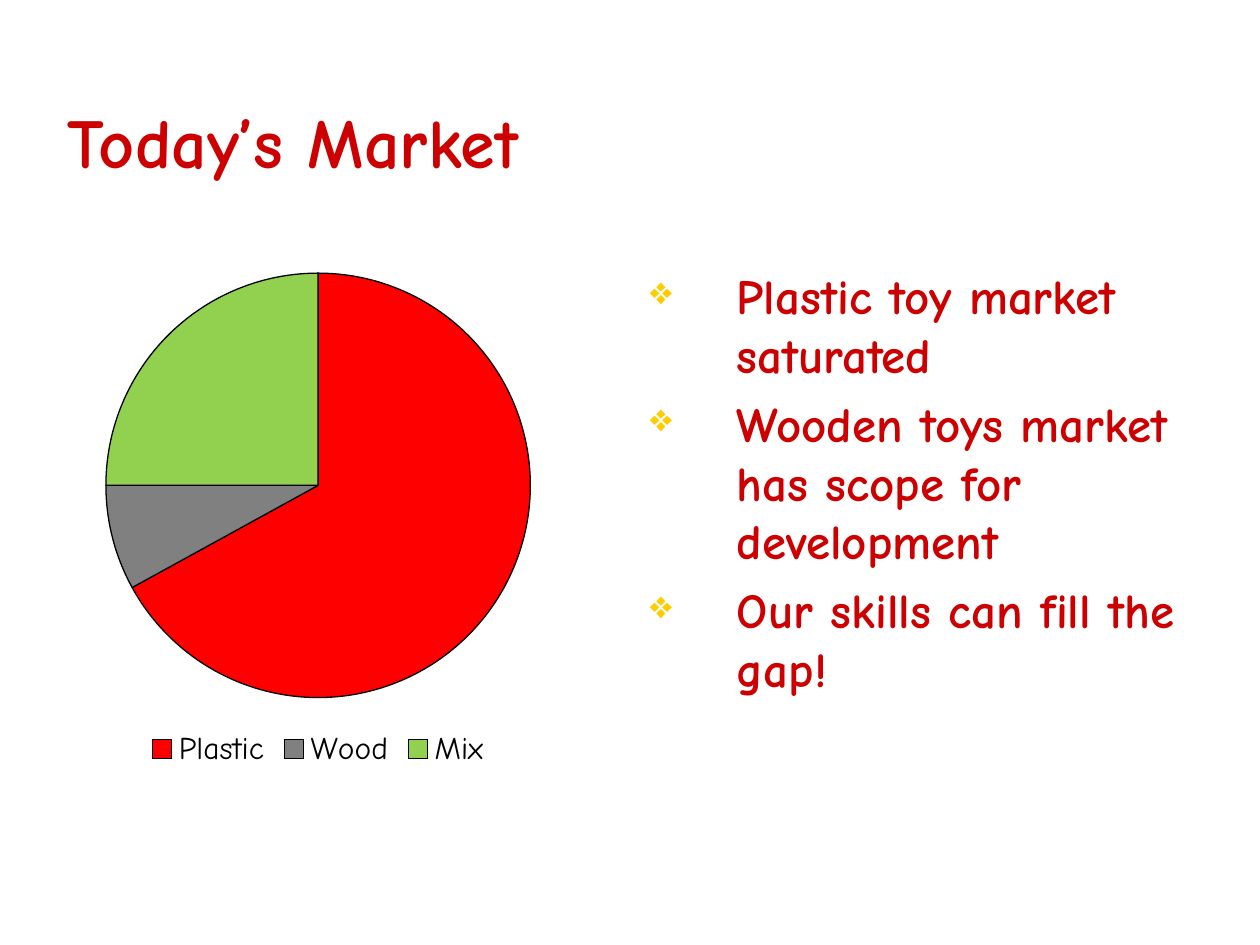
from dataclasses import dataclass

from lxml import etree
from pptx import Presentation
from pptx import util as u
from pptx.chart.data import CategoryChartData
from pptx.dml.color import RGBColor
from pptx.enum import chart as charts, text
from pptx.oxml import ns

FONT = "Comic Neue"
COLORS = {
    "heading": "CC0000",
    "bullet": "FFCC00",
    "outline": "000000",
    "plastic": "FF0000",
    "wood": "808080",
    "mix": "92D050",
}


@dataclass(frozen=True)
class Box:
    left: float
    top: float
    width: float
    height: float

    def lengths(self) -> tuple:
        return tuple(u.Inches(v) for v in (self.left, self.top, self.width, self.height))


@dataclass(frozen=True)
class Share:
    material: str
    percent: int
    color: str


SHARES = [
    Share("Plastic", 67, "plastic"),
    Share("Wood", 8, "wood"),
    Share("Mix", 25, "mix"),
]
FINDINGS = [
    "Plastic toy market saturated",
    "Wooden toys market has scope for development",
    "Our skills can fill the gap!",
]


def color(name: str) -> RGBColor:
    return RGBColor.from_string(COLORS[name])


def add_bullet(paragraph) -> None:
    properties = paragraph._p.get_or_add_pPr()
    properties.set("marL", str(u.Inches(0.69)))
    properties.set("indent", str(-u.Inches(0.69)))
    tint = etree.SubElement(properties, ns.qn("a:buClr"))
    etree.SubElement(tint, ns.qn("a:srgbClr"), val=COLORS["bullet"])
    etree.SubElement(properties, ns.qn("a:buSzPct"), val="80000")
    etree.SubElement(properties, ns.qn("a:buChar"), char="❖")


def add_text(slide, box: Box, lines: list[str], size: int, anchor, bulleted: bool = False) -> None:
    frame = slide.shapes.add_textbox(*box.lengths()).text_frame
    frame.word_wrap = True
    frame.vertical_anchor = anchor
    for index, line in enumerate(lines):
        paragraph = frame.add_paragraph() if index else frame.paragraphs[0]
        if bulleted:
            add_bullet(paragraph)
        if index:
            paragraph.space_before = u.Pt(size * 0.2)
        run = paragraph.add_run()
        run.text = line
        run.font.name = FONT
        run.font.size = u.Pt(size)
        run.font.bold = True
        run.font.color.rgb = color("heading")


def add_market_pie(slide, box: Box, shares: list[Share]) -> None:
    data = CategoryChartData()
    data.categories = [share.material for share in shares]
    data.add_series("Series 1", [share.percent for share in shares])
    pie = slide.shapes.add_chart(charts.XL_CHART_TYPE.PIE, *box.lengths(), data).chart
    pie.has_title = False
    pie.font.name = FONT
    pie.font.size = u.Pt(18)
    pie.font.color.rgb = color("outline")
    pie.has_legend = True
    pie.legend.position = charts.XL_LEGEND_POSITION.BOTTOM
    pie.legend.include_in_layout = False
    for index, share in enumerate(shares):
        wedge = pie.plots[0].series[0].points[index].format
        wedge.fill.solid()
        wedge.fill.fore_color.rgb = color(share.color)
        wedge.line.color.rgb = color("outline")
        wedge.line.width = u.Pt(0.75)


def main() -> None:
    """Build the slide on today's toy market."""
    deck = Presentation()
    deck.slide_width, deck.slide_height = u.Inches(10), u.Inches(7.5)
    slide = deck.slides.add_slide(deck.slide_layouts[6])
    add_text(slide, Box(0.44, 0.25, 8.5, 1.25), ["Today’s Market"], 40, text.MSO_ANCHOR.BOTTOM)
    add_text(slide, Box(5.06, 2.06, 4.39, 4.56), FINDINGS, 28, text.MSO_ANCHOR.TOP, bulleted=True)
    add_market_pie(slide, Box(0.55, 2.03, 3.95, 4.11), SHARES)
    deck.save("out.pptx")


if __name__ == "__main__":
    main()
